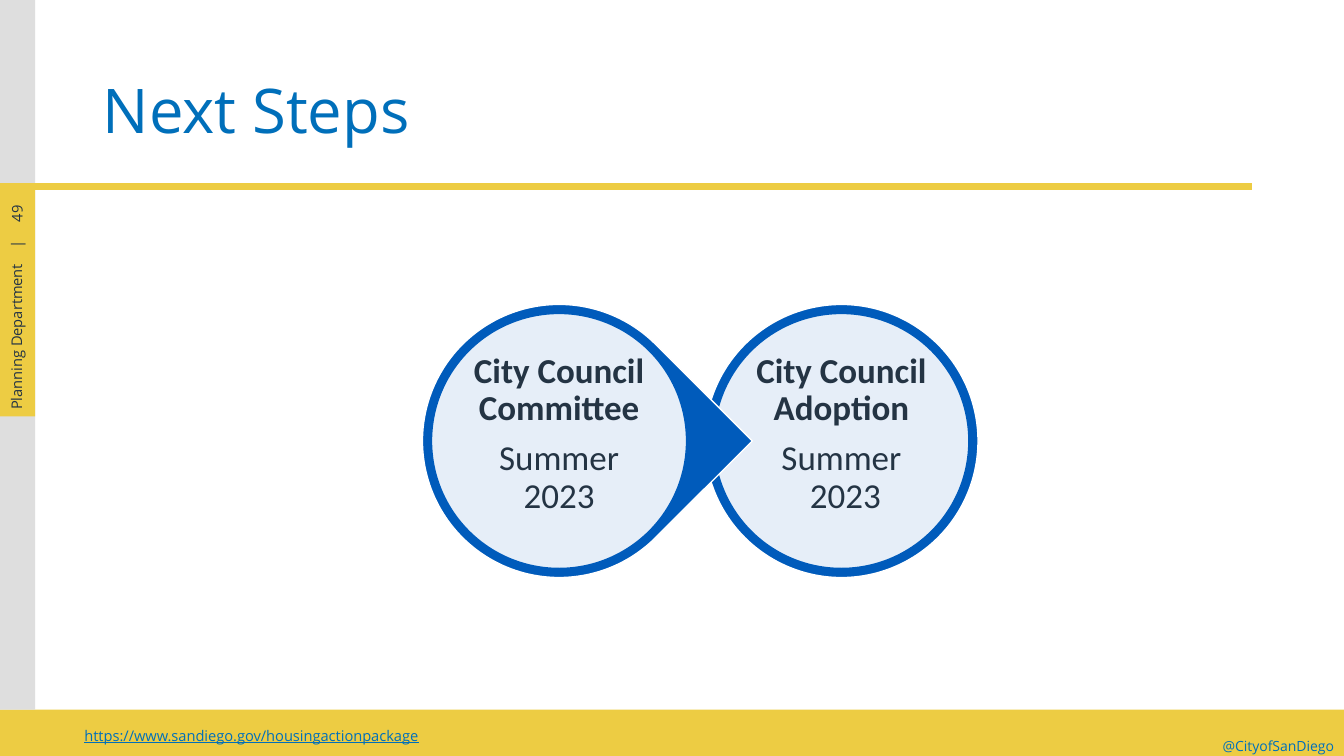
"""Build the Next Steps slide with two milestone circles."""
from lxml import etree
from pptx import Presentation, util as u
from pptx.dml.color import RGBColor
from pptx.enum import shapes, text
from pptx.oxml.ns import qn

GOLD, BLUE, DEEP, INK = "EDCC43", "006FBA", "005BBB", "243444"
SHAPE, ALIGN, ANCHOR = shapes.MSO_SHAPE, text.PP_ALIGN, text.MSO_ANCHOR

deck = Presentation()
deck.slide_width, deck.slide_height = u.Inches(13.33), u.Inches(7.5)
slide = deck.slides.add_slide(deck.slide_layouts[6])


def draw(kind, box, fill, edge=None, alpha=100):
    shape = slide.shapes.add_shape(kind, *map(u.Inches, box))
    shape.shadow.inherit = False
    shape.fill.solid()
    shape.fill.fore_color.rgb = RGBColor.from_string(fill)
    if alpha < 100:
        tint = shape._element.spPr.find(".//" + qn("a:srgbClr"))
        etree.SubElement(tint, qn("a:alpha")).set("val", str(alpha * 1000))
    if edge:
        shape.line.color.rgb = RGBColor.from_string(edge)
        shape.line.width = u.Pt(1)
    else:
        shape.line.fill.background()
    return shape


def write(box, lines, size, color, align=ALIGN.LEFT, anchor=ANCHOR.TOP, font="Open Sans"):
    shape = slide.shapes.add_textbox(*map(u.Inches, box))
    frame = shape.text_frame
    frame.word_wrap = True
    frame.vertical_anchor = anchor
    for i, line in enumerate(lines):
        para = frame.add_paragraph() if i else frame.paragraphs[0]
        para.text = line
        para.alignment = align
        for run in para.runs:
            run.font.size = u.Pt(size)
            run.font.name = font
            run.font.color.rgb = RGBColor.from_string(color)
    return shape


draw(SHAPE.RECTANGLE, (0, 7.04, 13.33, 0.46), GOLD)
write((11.67, 7.27, 1.66, 0.27), ["@CityofSanDiego"], 10, BLUE, ALIGN.RIGHT)
link = write((0.24, 7.09, 4.51, 0.41), ["https://www.sandiego.gov/housingactionpackage"],
             10.5, BLUE, ALIGN.CENTER, ANCHOR.MIDDLE)
link.text_frame.paragraphs[0].runs[0].font.underline = True

draw(SHAPE.RECTANGLE, (0, 0, 0.35, 7.04), "D9D9D9", alpha=85)
rule = slide.shapes.add_connector(shapes.MSO_CONNECTOR.STRAIGHT, u.Inches(0), u.Inches(1.85),
                                  u.Inches(12.42), u.Inches(1.85))
rule.line.color.rgb = RGBColor.from_string(GOLD)
rule.line.width = u.Pt(4.5)
etree.SubElement(rule._element.spPr, qn("a:effectLst"))
draw(SHAPE.RECTANGLE, (0, 1.82, 0.35, 2.31), GOLD)

page = write((-0.06, 1.97, 0.45, 0.3), ["49"], 10.5, INK, ALIGN.CENTER, ANCHOR.MIDDLE)
dept = write((-0.81, 3.05, 1.95, 0.28), ["Planning Department\t|"], 10.5, INK)
page.rotation = dept.rotation = 270
props = dept.text_frame.paragraphs[0]._p.get_or_add_pPr()
tabs = etree.SubElement(props, qn("a:tabLst"))
etree.SubElement(tabs, qn("a:tab"), pos=str(u.Inches(1.6)), algn="l")

title = write((0.92, 0.4, 11.5, 1.45), ["Next Steps"], 44, BLUE, anchor=ANCHOR.MIDDLE)
title.text_frame.paragraphs[0].line_spacing = 0.9

steps = [
    (6.99, SHAPE.OVAL, 0, "City Council Adoption", "Summer\v 2023"),
    (4.19, SHAPE.TEAR, 45, "City Council Committee", "Summer\v2023"),
]
for left, kind, turn, name, date in steps:
    ring = draw(kind, (left, 3.02, 2.71, 2.71), DEEP, "FFFFFF")
    ring.rotation = turn
    draw(SHAPE.OVAL, (left + 0.09, 3.11, 2.53, 2.53), "FFFFFF", DEEP, 90)
    label = write((left + 0.45, 3.47, 1.81, 1.81), [name, date], 25, INK,
                  ALIGN.CENTER, font="Calibri")
    frame = label.text_frame
    frame.margin_left = frame.margin_right = u.Inches(0.03)
    frame.margin_top = frame.margin_bottom = u.Inches(0.03)
    for para in frame.paragraphs:
        para.line_spacing = 0.9
        para.space_after = u.Pt(8.75)
    frame.paragraphs[0].runs[0].font.bold = True

deck.save("out.pptx")
